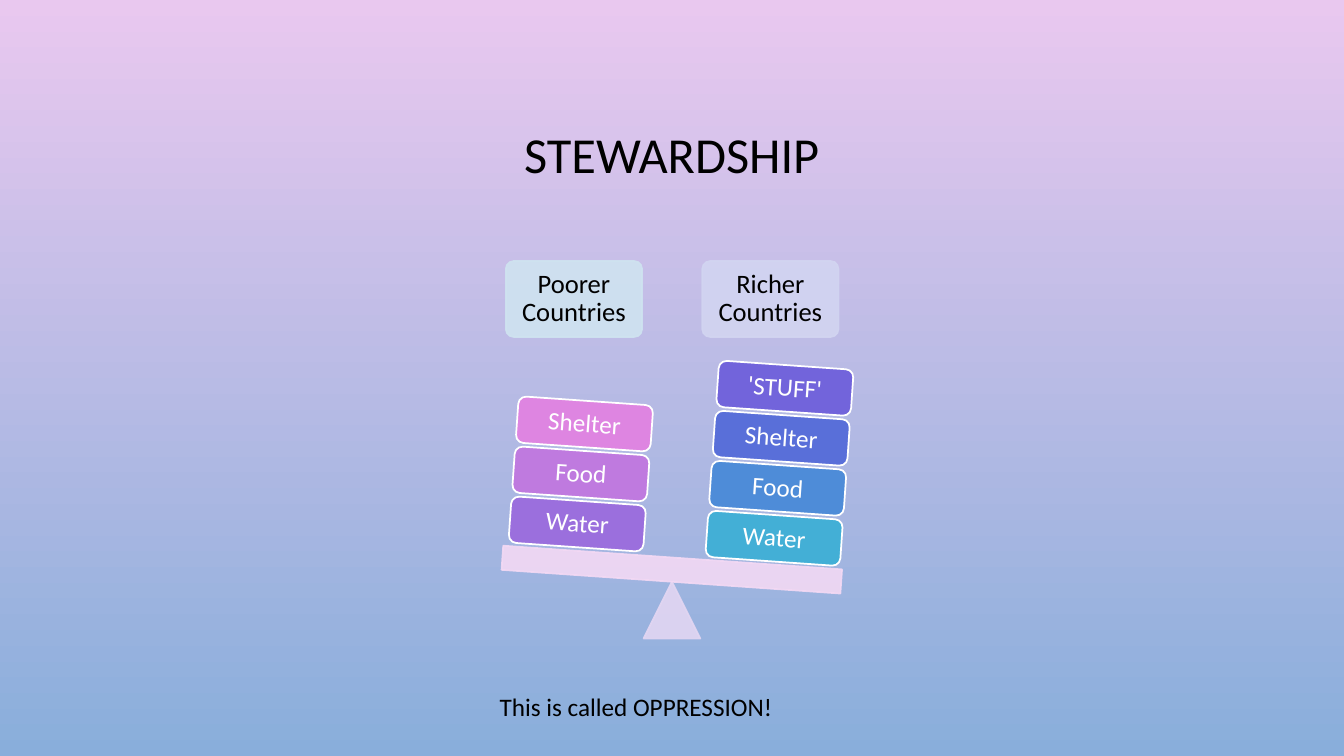
from dataclasses import dataclass

import pptx
import pptx.dml.color
import pptx.enum.shapes
import pptx.enum.text
import pptx.oxml
import pptx.oxml.ns
import pptx.util
from pptx.util import Cm

Kind = pptx.enum.shapes.MSO_SHAPE
Align = pptx.enum.text.PP_ALIGN
Anchor = pptx.enum.text.MSO_ANCHOR

COLORS = {
    "sky_top": "E9C8EF", "sky_bottom": "89AEDB",
    "black": "000000", "white": "FFFFFF",
    "poorer": "CFE3F0", "richer": "D2D5F1",
    "pivot": "E2D6F2", "plank": "F3D9F4",
    "cyan": "43AFD6", "blue": "4E8CD8", "indigo": "596FD9", "violet": "7264DB",
    "purple": "9B6FDD", "orchid": "BF7ADF", "pink": "DE85E1",
}
TILT = 4
BLOCK_WIDTH, BLOCK_HEIGHT = 3.4, 1.17
STEP_X, STEP_Y = 0.09, -1.26  # from one block to the next one up


@dataclass
class Part:
    kind: Kind
    left: float
    top: float
    width: float
    height: float
    fill: str
    line: str
    rotation: float = 0
    opacity: int = 100


@dataclass
class Stack:
    left: float
    top: float
    blocks: list[tuple[str, str]]  # label and colour, bottom first


def rgb(name: str) -> pptx.dml.color.RGBColor:
    return pptx.dml.color.RGBColor.from_string(COLORS[name])


def write(shape, text: str, size: float, color: str = "black",
          align: Align = Align.CENTER, anchor: Anchor = Anchor.MIDDLE,
          spacing: float = 0.9, inset: float | None = None) -> None:
    frame = shape.text_frame
    frame.word_wrap = True
    frame.vertical_anchor = anchor
    if inset is not None:
        frame.margin_left = frame.margin_right = Cm(inset)
        frame.margin_top = frame.margin_bottom = Cm(inset)
    paragraph = frame.paragraphs[0]
    paragraph.text = text
    paragraph.alignment = align
    paragraph.line_spacing = spacing
    paragraph.font.name = "Calibri"
    paragraph.font.size = pptx.util.Pt(size)
    paragraph.font.color.rgb = rgb(color)


def draw(slide, part: Part):
    shape = slide.shapes.add_shape(part.kind, Cm(part.left), Cm(part.top),
                                   Cm(part.width), Cm(part.height))
    shape.shadow.inherit = False
    shape.rotation = part.rotation
    shape.fill.solid()
    shape.fill.fore_color.rgb = rgb(part.fill)
    shape.line.color.rgb = rgb(part.line)
    shape.line.width = pptx.util.Pt(1.25)
    if part.opacity < 100:
        for color in shape.element.spPr.iter(pptx.oxml.ns.qn("a:srgbClr")):
            alpha = pptx.oxml.parse_xml(
                f'<a:alpha {pptx.oxml.ns.nsdecls("a")} val="{part.opacity * 1000}"/>')
            color.append(alpha)
    return shape


def draw_stack(slide, stack: Stack) -> None:
    for level, (label, color) in enumerate(stack.blocks):
        block = draw(slide, Part(Kind.ROUNDED_RECTANGLE,
                                 stack.left + level * STEP_X, stack.top + level * STEP_Y,
                                 BLOCK_WIDTH, BLOCK_HEIGHT, color, "white", TILT))
        write(block, label, 18, "white", inset=0.24)


def main() -> None:
    presentation = pptx.Presentation()
    presentation.slide_width, presentation.slide_height = Cm(33.87), Cm(19.05)
    slide = presentation.slides.add_slide(presentation.slide_layouts[6])

    # Background
    background = slide.background.fill
    background.gradient()
    background.gradient_angle = 270
    for stop, color in zip(background.gradient_stops, ("sky_top", "sky_bottom")):
        stop.color.rgb = rgb(color)

    # Title
    title = slide.shapes.add_textbox(Cm(2.54), Cm(1.73), Cm(28.78), Cm(4.45))
    write(title, "STEWARDSHIP", 36)

    # Headings
    for left, text, color in ((12.75, "Poorer Countries", "poorer"),
                              (17.7, "Richer Countries", "richer")):
        heading = draw(slide, Part(Kind.ROUNDED_RECTANGLE, left, 6.58, 3.43, 1.91,
                                   color, color, opacity=90))
        heading.adjustments[0] = 0.1
        write(heading, text, 19, inset=0.25)

    # Seesaw
    draw(slide, Part(Kind.ISOSCELES_TRIANGLE, 16.22, 14.66, 1.43, 1.43,
                     "pivot", "pivot", opacity=90))
    draw(slide, Part(Kind.RECTANGLE, 12.65, 14.05, 8.56, 0.61,
                     "plank", "plank", TILT, 90))

    # Stacks of needs
    draw_stack(slide, Stack(17.81, 12.98, [("Water", "cyan"), ("Food", "blue"),
                                           ("Shelter", "indigo"), ("'STUFF'", "violet")]))
    draw_stack(slide, Stack(12.85, 12.62, [("Water", "purple"), ("Food", "orchid"),
                                           ("Shelter", "pink")]))

    # Caption
    caption = slide.shapes.add_textbox(Cm(12.34), Cm(17.3), Cm(12.42), Cm(1.02))
    write(caption, "This is called OPPRESSION!", 18, align=Align.LEFT,
          anchor=Anchor.TOP, spacing=1.0)

    presentation.save("out.pptx")


if __name__ == "__main__":
    main()
